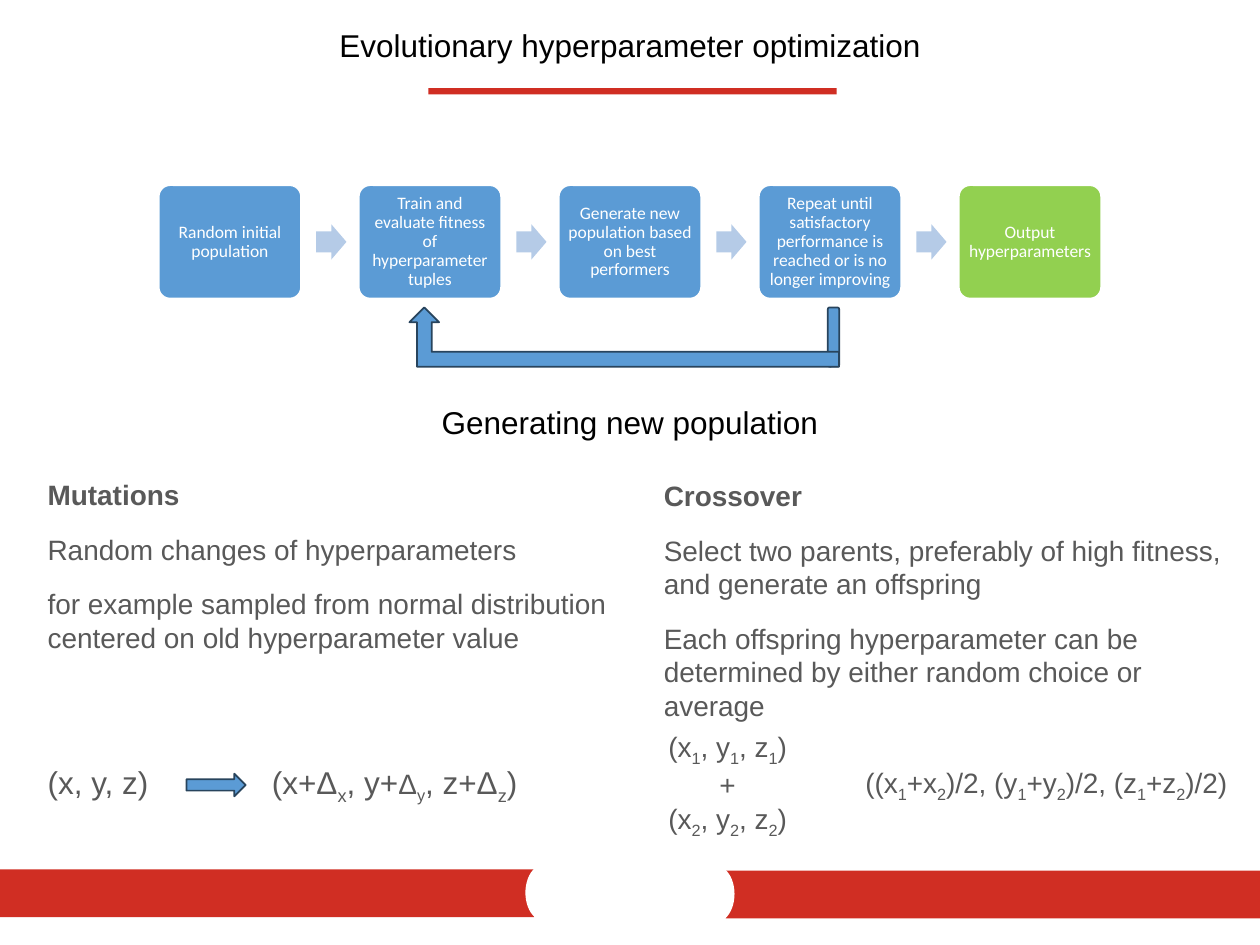
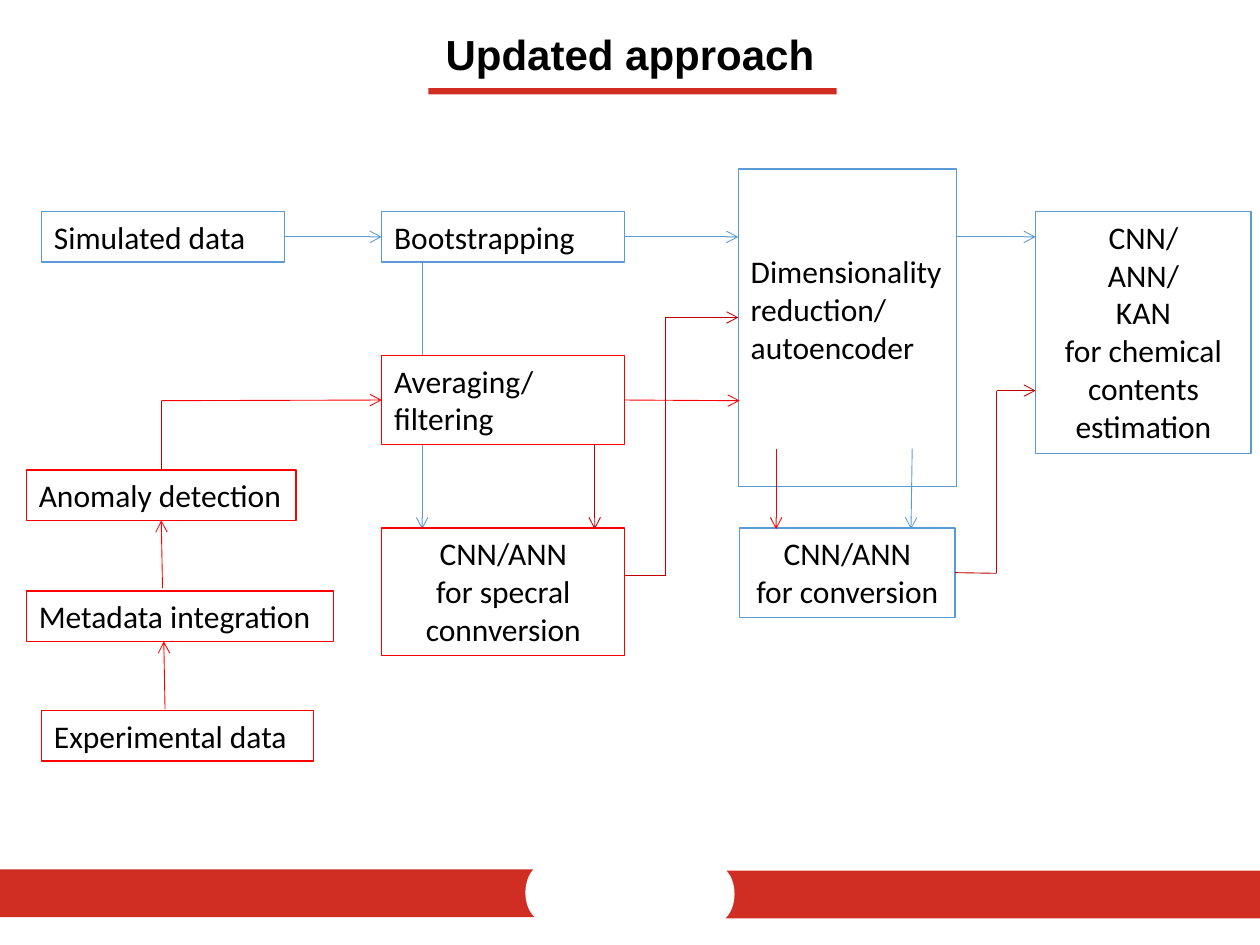
from itertools import pairwise

from lxml.etree import SubElement
from pptx import Presentation
from pptx.dml.color import RGBColor
from pptx.enum.shapes import MSO_CONNECTOR, MSO_SHAPE as Preset
from pptx.enum.text import MSO_ANCHOR as Anchor, MSO_AUTO_SIZE, PP_ALIGN as Align
from pptx.oxml.ns import qn
from pptx.util import Inches, Pt

RED_BAND, RED, DARK_RED = "D02E23", "FF0000", "C00000"
BLUE, NAVY, PALE_BLUE, GREEN = "5B9BD5", "28445D", "B5CBE7", "92D050"
WHITE, BLACK, GREY = "FFFFFF", "000000", "595959"
TOP, LEFT, BOTTOM, RIGHT = range(4)


def color_of(value):
    """Turn a hex string into a colour."""
    return RGBColor.from_string(value)


def add_span(para, text, font, size, color, bold=False, subscript=False):
    """Add one run with its format."""
    if not text:
        return
    span = para.add_run()
    span.text = text
    span.font.name, span.font.size, span.font.bold = font, Pt(size), bold
    span.font.color.rgb = color_of(color)
    if subscript:
        span.font._element.set("baseline", "-25000")


def add_marked(para, text, **style):
    """Add text where an underscore lowers the next character and a newline breaks the line."""
    for number, line in enumerate(text.split("\n")):
        if number:
            para.add_line_break()
        first, *rest = line.split("_")
        add_span(para, first, **style)
        for piece in rest:
            add_span(para, piece[0], subscript=True, **style)
            add_span(para, piece[1:], **style)


def write(shape, *paras, font="Arial", size=18, color=BLACK, bold=False, align=Align.LEFT,
          anchor=Anchor.TOP, after=0, spacing=None, margins=(0.1, 0.05, 0.1, 0.05)):
    """Fill a shape with paragraphs, each a string or a list of (text, overrides) pairs."""
    frame = shape.text_frame
    frame.word_wrap, frame.auto_size = True, MSO_AUTO_SIZE.NONE
    frame.vertical_anchor = anchor
    (frame.margin_left, frame.margin_top,
     frame.margin_right, frame.margin_bottom) = map(Inches, margins)
    style = dict(font=font, size=size, color=color, bold=bold)
    for number, content in enumerate(paras):
        para = frame.add_paragraph() if number else frame.paragraphs[0]
        para.alignment, para.space_after = align, Pt(after)
        if spacing:
            para.line_spacing = spacing
        spans = [(content, {})] if isinstance(content, str) else content
        for text, overrides in spans:
            add_marked(para, text, **{**style, **overrides})
    return shape


def add_text(page, box, *paras, **style):
    """Add a text box at (left, top, width, height)."""
    return write(page.shapes.add_textbox(*map(Inches, box)), *paras, **style)


def add_block(page, preset, box, fill=None, line=None, weight=1):
    """Add a preset shape with flat fill and outline."""
    shape = page.shapes.add_shape(preset, *map(Inches, box))
    shape.shadow.inherit = False
    if fill:
        shape.fill.solid()
        shape.fill.fore_color.rgb = color_of(fill)
    else:
        shape.fill.background()
    if line:
        shape.line.color.rgb = color_of(line)
        shape.line.width = Pt(weight)
    else:
        shape.line.fill.background()
    return shape


def add_link(page, start, end, color, arrow=True, begin_at=None, end_at=None):
    """Draw a thin straight line, joined to (shape, side) pairs where given."""
    link = page.shapes.add_connector(MSO_CONNECTOR.STRAIGHT, *map(Inches, (*start, *end)))
    if begin_at:
        link.begin_connect(*begin_at)
    if end_at:
        link.end_connect(*end_at)
    link.line.color.rgb = color_of(color)
    link.line.width = Pt(0.5)
    if arrow:
        SubElement(link.line._get_or_add_ln(), qn("a:tailEnd"), type="arrow")
    SubElement(link._element.spPr, qn("a:effectLst"))


def add_footer_band(page, left, top, notch_left):
    """Draw one red footer band with a white notch at its inner end."""
    add_block(page, Preset.RECTANGLE, (left, top, 4.24, 0.38), RED_BAND)
    add_block(page, Preset.OVAL, (notch_left, top - 0.04, 0.3, 0.45), WHITE)


def add_page(deck, title, box, **style):
    """Add a slide with the shared title, title rule and footer bands."""
    page = deck.slides.add_slide(deck.slide_layouts[5])
    heading = page.shapes.title
    heading.left, heading.top, heading.width, heading.height = map(Inches, box)
    write(heading, title, align=Align.CENTER, **style)
    add_block(page, Preset.RECTANGLE, (3.4, 0.7, 3.24, 0.05), RED_BAND)
    add_footer_band(page, 5.76, 6.91, 5.53)
    add_footer_band(page, 0, 6.9, 4.17)
    return page


def add_process(page, box):
    """Draw the row of steps with arrows and the loop back to the second step."""
    left, top, width, height = box
    steps = ["Random initial population",
             "Train and evaluate fitness of hyperparameter tuples",
             "Generate new population based on best performers",
             "Repeat until satisfactory performance is reached or is no longer improving",
             "Output hyperparameters"]
    card = 1.13
    pitch = (width - card) / (len(steps) - 1)
    for number, step in enumerate(steps):
        x, last = left + number * pitch, number == len(steps) - 1
        shape = add_block(page, Preset.ROUNDED_RECTANGLE, (x, top, card, height),
                          GREEN if last else BLUE, WHITE)
        shape.adjustments[0] = 0.1
        write(shape, step, font="Calibri", size=10, color=WHITE, align=Align.CENTER,
              anchor=Anchor.MIDDLE, spacing=0.9, margins=[0.04] * 4)
        if not last:
            arrow = add_block(page, Preset.RIGHT_ARROW,
                              (x + 1.25, top + 0.31, 0.24, 0.28), PALE_BLUE)
            arrow.adjustments[0] = 0.6
    loop_top = top + height + 0.07
    add_block(page, Preset.ROUNDED_RECTANGLE, (left + 5.31, loop_top, 0.09, 0.47), BLUE, NAVY)
    loop = add_block(page, Preset.BENT_UP_ARROW, (left + 1.99, loop_top, 3.41, 0.47), BLUE, NAVY)
    loop._element.spPr.xfrm.set("flipH", "1")


def add_mutations(page, box):
    """Explain mutation, with its formula below."""
    left, top, width, height = box
    add_text(page, box, [("Mutations", {"bold": True})],
             "Random changes of hyperparameters",
             "for example sampled from normal distribution centered on old hyperparameter value",
             size=16, color=GREY, after=12)
    formula_top = top + 2.27
    add_text(page, (left, formula_top, 1.2, 0.4), "(x, y, z)", color=GREY)
    add_text(page, (left + 1.78, formula_top, 2.31, 0.4),
             [("(x+Δ_x, y+", {}), ("Δ_y", {"size": 16}), (", z+Δ_z)", {})], color=GREY)
    add_block(page, Preset.RIGHT_ARROW, (left + 1.2, formula_top + 0.13, 0.47, 0.18), BLUE, NAVY)


def add_crossover(page, box):
    """Explain crossover, with parents and offspring below."""
    left, top, width, height = box
    style = dict(size=16, color=GREY)
    add_text(page, box, [("Crossover", {"bold": True})],
             "Select two parents, preferably of high fitness, and generate an offspring",
             "Each offspring hyperparameter can be determined by either random choice or average",
             after=12, **style)
    add_text(page, (left - 0.17, top + 1.99, 1.55, 0.91),
             "(x_1, y_1, z_1)", "+", "(x_2, y_2, z_2)", align=Align.CENTER, **style)
    add_text(page, (left + 1.6, top + 2.28, 3.2, 0.37),
             "((x_1+x_2)/2, (y_1+y_2)/2, (z_1+z_2)/2)", **style)


def add_pipeline(page, box):
    """Draw the data pipeline: boxes and the routes between them."""
    left, top, width, height = box

    def place(x, y):
        return left + x, top + y

    def node(x, y, w, h, color, *paras, fill=None, **style):
        shape = add_block(page, Preset.RECTANGLE, (*place(x, y), w, h), fill, color, 0.75)
        return write(shape, *paras, font="Calibri", **style)

    def route(color, *points, begin_at=None, end_at=None, arrow=True):
        legs = list(pairwise(place(*point) for point in points))
        for number, (start, end) in enumerate(legs):
            first, last = number == 0, number == len(legs) - 1
            add_link(page, start, end, color, arrow and last,
                     begin_at if first else None, end_at if last else None)

    centered = dict(align=Align.CENTER)
    main_y, filter_y, arrival_y = 0.54, 1.84, 2.86
    route(BLUE, (3.14, 0.74), (3.14, arrival_y))

    simulated = node(0.12, 0.34, 1.93, 0.4, BLUE, "Simulated data")
    bootstrapping = node(2.82, 0.34, 1.93, 0.4, BLUE, "Bootstrapping")
    averaging = node(2.82, 1.48, 1.93, 0.71, RED, "Averaging/", "filtering", fill=WHITE)
    anomaly = node(0, 2.39, 2.14, 0.4, RED, "Anomaly detection")
    node(0, 3.35, 2.44, 0.4, RED, "Metadata integration")
    node(0.12, 4.3, 2.16, 0.4, RED, "Experimental data")
    node(5.65, 0, 1.73, 2.52, BLUE, "Dimensionality reduction/\nautoencoder",
         margins=(0.1, 0.66, 0.1, 0.05))
    conversion = node(5.66, 2.85, 1.71, 0.71, BLUE, "CNN/ANN\nfor conversion", **centered)
    node(8.01, 0.34, 1.71, 1.92, BLUE, "CNN/", "ANN/",
         "KAN\nfor chemical contents estimation", **centered)
    node(2.82, 2.85, 1.93, 1.01, RED, "CNN/ANN\nfor specral connversion",
         fill=WHITE, **centered)

    route(BLUE, (2.05, main_y), (2.82, main_y),
          begin_at=(simulated, RIGHT), end_at=(bootstrapping, LEFT))
    route(BLUE, (4.75, main_y), (5.65, main_y), begin_at=(bootstrapping, RIGHT))
    route(BLUE, (7.38, main_y), (8.01, main_y))
    route(RED, (1.1, 4.29), (1.09, 3.75))
    route(RED, (1.08, 3.33), (1.07, 2.79), end_at=(anomaly, BOTTOM))
    route(DARK_RED, (1.07, 2.39), (1.07, filter_y), begin_at=(anomaly, TOP), arrow=False)
    route(RED, (1.07, filter_y), (2.82, filter_y), end_at=(averaging, LEFT))
    route(RED, (4.75, filter_y), (5.66, filter_y), begin_at=(averaging, RIGHT))
    route(DARK_RED, (4.51, 2.19), (4.51, arrival_y))
    route(DARK_RED, (4.75, 3.23), (5.07, 3.23), (5.07, 1.18), (5.65, 1.18))
    route(RED, (5.95, 2.22), (5.95, arrival_y))
    route(BLUE, (7.03, 2.22), (7.02, arrival_y))
    route(DARK_RED, (7.37, 3.21), (7.7, 3.21), (7.7, 1.76), (8.01, 1.76),
          begin_at=(conversion, RIGHT))


def add_optimization_slide(deck):
    """Show evolutionary optimization and how new populations arise."""
    page = add_page(deck, "Evolutionary hyperparameter optimization", (0, 0.16, 10, 0.4))
    add_process(page, (1.26, 1.47, 7.48, 0.9))
    add_text(page, (2.5, 3.15, 5, 0.4), "Generating new population", align=Align.CENTER)
    add_mutations(page, (0.28, 3.74, 5, 1.51))
    add_crossover(page, (5.17, 3.75, 4.65, 2.05))


def add_approach_slide(deck):
    """Show the updated approach as a pipeline."""
    page = add_page(deck, "Updated approach", (0, 0.19, 10, 0.43), size=24, bold=True,
                    anchor=Anchor.MIDDLE, spacing=Pt(32))
    add_pipeline(page, (0.21, 1.34, 9.72, 4.7))


def main():
    """Build and save the deck."""
    deck = Presentation()
    deck.slide_width, deck.slide_height = Inches(10), Inches(7.5)
    add_optimization_slide(deck)
    add_approach_slide(deck)
    deck.save("out.pptx")


if __name__ == "__main__":
    main()
